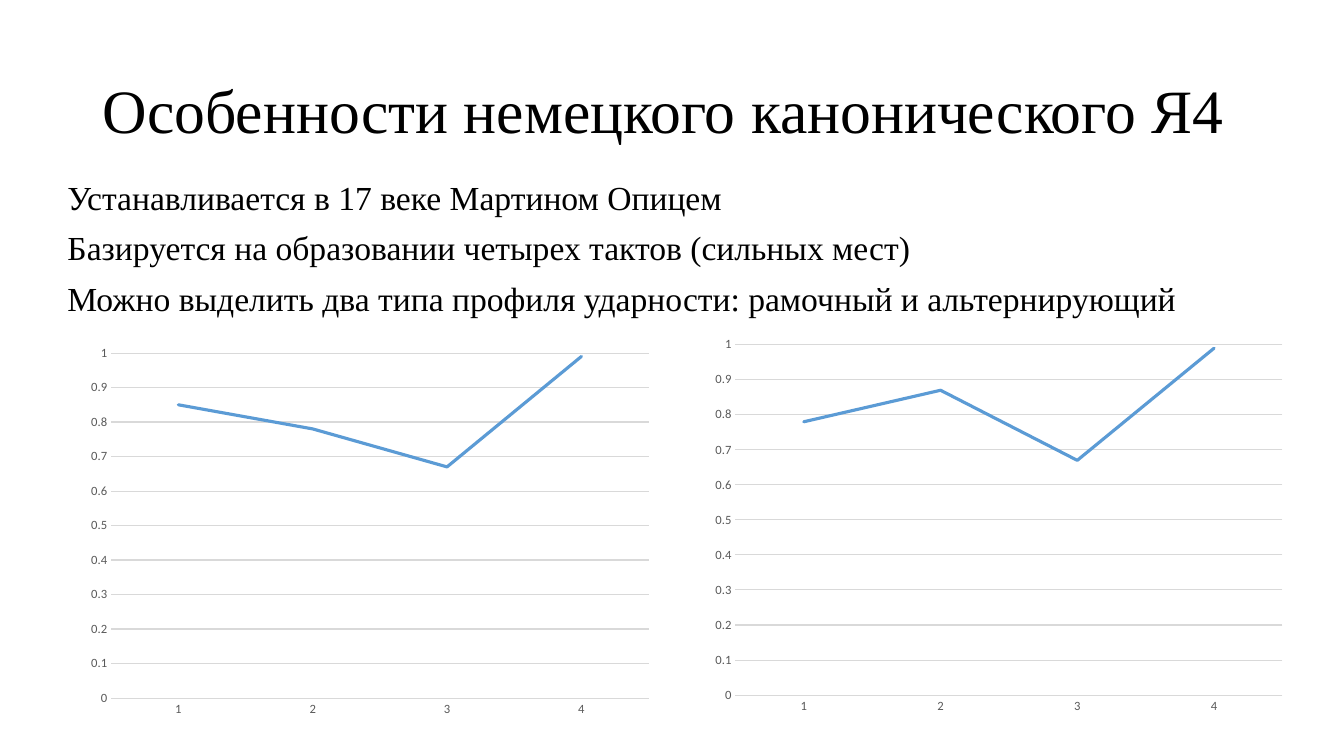
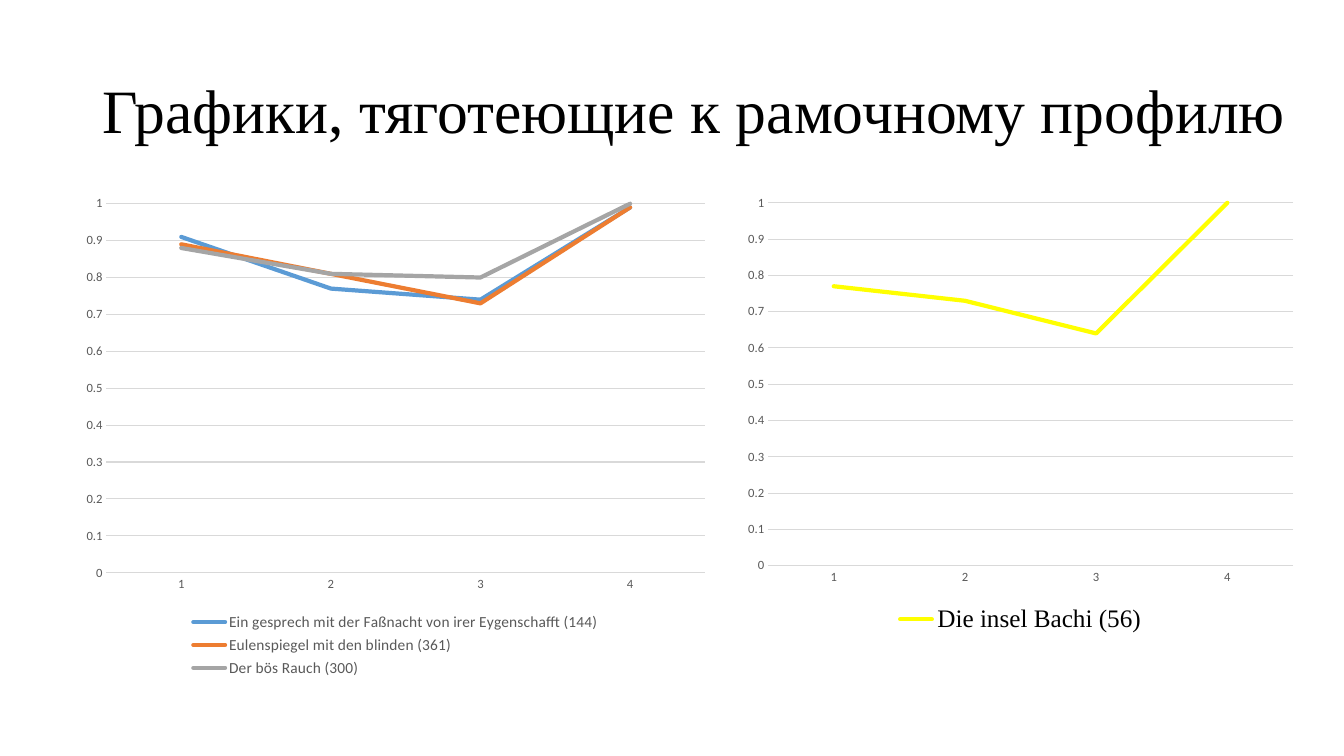
from pptx import Presentation
from pptx.chart.data import CategoryChartData
from pptx.dml.color import RGBColor
from pptx.enum.chart import XL_CHART_TYPE, XL_LEGEND_POSITION, XL_TICK_MARK
from pptx.enum.text import MSO_ANCHOR, MSO_AUTO_SIZE, PP_ALIGN
from pptx.oxml import parse_xml
from pptx.oxml.ns import nsdecls
from pptx.util import Pt

# Colours and fonts
BLACK = RGBColor(0x00, 0x00, 0x00)
GREY_TEXT = RGBColor(0x59, 0x59, 0x59)
GRID_GREY = RGBColor(0xD9, 0xD9, 0xD9)
BLUE = RGBColor(0x5B, 0x9B, 0xD5)
ORANGE = RGBColor(0xED, 0x7D, 0x31)
GREY = RGBColor(0xA5, 0xA5, 0xA5)
YELLOW = RGBColor(0xFF, 0xFF, 0x00)
SERIF = "Times New Roman"
SANS = "Calibri"

# Text formats
TITLE_FONT = {"name": SERIF, "size": Pt(44), "color": BLACK}
BODY_FONT = {"name": SERIF, "size": Pt(24), "color": BLACK}
CHART_FONT = {"name": SANS, "size": Pt(10), "color": BLACK}
AXIS_FONT = {"name": SANS, "size": Pt(9), "color": GREY_TEXT}
SMALL_LEGEND = {"name": SANS, "size": Pt(11), "color": GREY_TEXT}
LARGE_LEGEND = {"name": SERIF, "size": Pt(18), "color": BLACK}
FRAME = {"word_wrap": True, "auto_size": MSO_AUTO_SIZE.NONE}
TITLE_PARAGRAPH = {"alignment": PP_ALIGN.LEFT, "line_spacing": 0.9}
BODY_PARAGRAPH = {**TITLE_PARAGRAPH, "space_before": Pt(10)}

STRONG_POSITIONS = ["1", "2", "3", "4"]
PLAIN_LAYOUT, TITLE_ONLY_LAYOUT = 1, 5


def set_attributes(target, values):
    for name, value in values.items():
        setattr(target, name, value)


def set_font(font, values):
    for name, value in values.items():
        if name == "color":
            font.color.rgb = value
        else:
            setattr(font, name, value)


def set_line(line, color, width):
    line.color.rgb = color
    line.width = Pt(width)


def place(shape, box):
    names = ("left", "top", "width", "height")
    set_attributes(shape, {n: Pt(v) for n, v in zip(names, box)})


def fill_placeholder(placeholder, lines, box, anchor, paragraph_format, font):
    place(placeholder, box)
    frame = placeholder.text_frame
    frame.text = "\n".join(lines)
    set_attributes(frame, {**FRAME, "vertical_anchor": anchor})
    for paragraph in frame.paragraphs:
        set_attributes(paragraph, paragraph_format)
        for run in paragraph.runs:
            set_font(run.font, font)


def add_title(slide, text, width=828):
    fill_placeholder(slide.shapes.title, [text], (66.2, 28.8, width, 104.4),
                     MSO_ANCHOR.MIDDLE, TITLE_PARAGRAPH, TITLE_FONT)


def add_unbulleted_list(slide, lines, box):
    body = slide.placeholders[1]
    fill_placeholder(body, lines, box, MSO_ANCHOR.TOP, BODY_PARAGRAPH, BODY_FONT)
    for paragraph in body.text_frame.paragraphs:
        properties = paragraph._p.get_or_add_pPr()
        properties.set("marL", "0")
        properties.set("indent", "0")
        properties.append(parse_xml(f"<a:buNone {nsdecls('a')}/>"))


def set_plot_area(chart, fractions):
    plot_area = chart.element.xpath("c:chart/c:plotArea")[0]
    for layout in plot_area.xpath("c:layout"):
        plot_area.remove(layout)
    modes = '<c:xMode val="edge"/><c:yMode val="edge"/>'
    sizes = "".join(f'<c:{n} val="{v}"/>' for n, v in zip("xywh", fractions))
    plot_area.insert(0, parse_xml(
        f"<c:layout {nsdecls('c')}><c:manualLayout>"
        f'<c:layoutTarget val="inner"/>{modes}{sizes}'
        "</c:manualLayout></c:layout>"))


def format_axes(chart):
    for axis in (chart.category_axis, chart.value_axis):
        set_attributes(axis, {"major_tick_mark": XL_TICK_MARK.NONE,
                              "minor_tick_mark": XL_TICK_MARK.NONE})
        set_font(axis.tick_labels.font, AXIS_FONT)
    set_line(chart.category_axis.format.line, GRID_GREY, 0.75)
    values = chart.value_axis
    set_attributes(values, {"minimum_scale": 0, "maximum_scale": 1,
                            "major_unit": 0.1, "has_major_gridlines": True})
    values.format.line.fill.background()
    set_line(values.major_gridlines.format.line, GRID_GREY, 0.75)


def add_stress_chart(slide, box, profiles, line_width, legend_font=None, plot=None):
    """Draw one line per (name, color, values) stress profile."""
    data = CategoryChartData()
    data.categories = STRONG_POSITIONS
    for name, _, values in profiles:
        data.add_series(name, values)
    chart = slide.shapes.add_chart(XL_CHART_TYPE.LINE, *map(Pt, box), data).chart
    set_attributes(chart, {"has_title": False, "has_legend": legend_font is not None})
    set_font(chart.font, CHART_FONT)
    format_axes(chart)
    chart.plots[0].vary_by_categories = False
    for series, (_, color, _) in zip(chart.plots[0].series, profiles):
        series.smooth = False
        set_line(series.format.line, color, line_width)
    for outline in chart.element.xpath("c:chart//c:ser/c:spPr/a:ln"):
        outline.set("cap", "rnd")
    if legend_font:
        set_attributes(chart.legend, {"position": XL_LEGEND_POSITION.BOTTOM,
                                      "include_in_layout": False})
        set_font(chart.legend.font, legend_font)
    if plot:
        set_plot_area(chart, plot)


def build_canonical_slide(presentation):
    slide = presentation.slides.add_slide(presentation.slide_layouts[PLAIN_LAYOUT])
    add_title(slide, "Особенности немецкого канонического Я4")
    add_unbulleted_list(slide, [
        "Устанавливается в 17 веке Мартином Опицем",
        "Базируется на образовании четырех тактов (сильных мест)",
        "Можно выделить два типа профиля ударности: рамочный и альтернирующий",
    ], (41, 126, 918.7, 331.9))
    # Frame profile on the left, alternating profile on the right
    for left, values, plot in (
        (58.3, (0.85, 0.78, 0.67, 0.99), (0.05, 0.06, 0.91, 0.88)),
        (502.6, (0.78, 0.87, 0.67, 0.99), None),
    ):
        add_stress_chart(slide, (left, 235.4, 421.9, 280.1),
                         [("Series 1", BLUE, values)], 2.25, plot=plot)


def build_frame_profile_slide(presentation):
    slide = presentation.slides.add_slide(presentation.slide_layouts[TITLE_ONLY_LAYOUT])
    add_title(slide, "Графики, тяготеющие к рамочному профилю", width=875.5)
    add_stress_chart(slide, (52.6, 133.2, 460.1, 353.5), [
        ("Ein gesprech mit der Faßnacht von irer Eygenschafft (144)", BLUE,
         (0.91, 0.77, 0.74, 0.99)),
        ("Eulenspiegel mit den blinden (361)", ORANGE, (0.89, 0.81, 0.73, 0.99)),
        ("Der bös Rauch (300)", GREY, (0.88, 0.81, 0.8, 1)),
    ], 3, SMALL_LEGEND)
    add_stress_chart(slide, (526.3, 133.2, 405.4, 322.6), [
        ("Die insel Bachi (56)", YELLOW, (0.77, 0.73, 0.64, 1)),
    ], 3, LARGE_LEGEND)


def main():
    presentation = Presentation()
    set_attributes(presentation, {"slide_width": Pt(960), "slide_height": Pt(540)})
    build_canonical_slide(presentation)
    build_frame_profile_slide(presentation)
    presentation.save("out.pptx")


if __name__ == "__main__":
    main()
